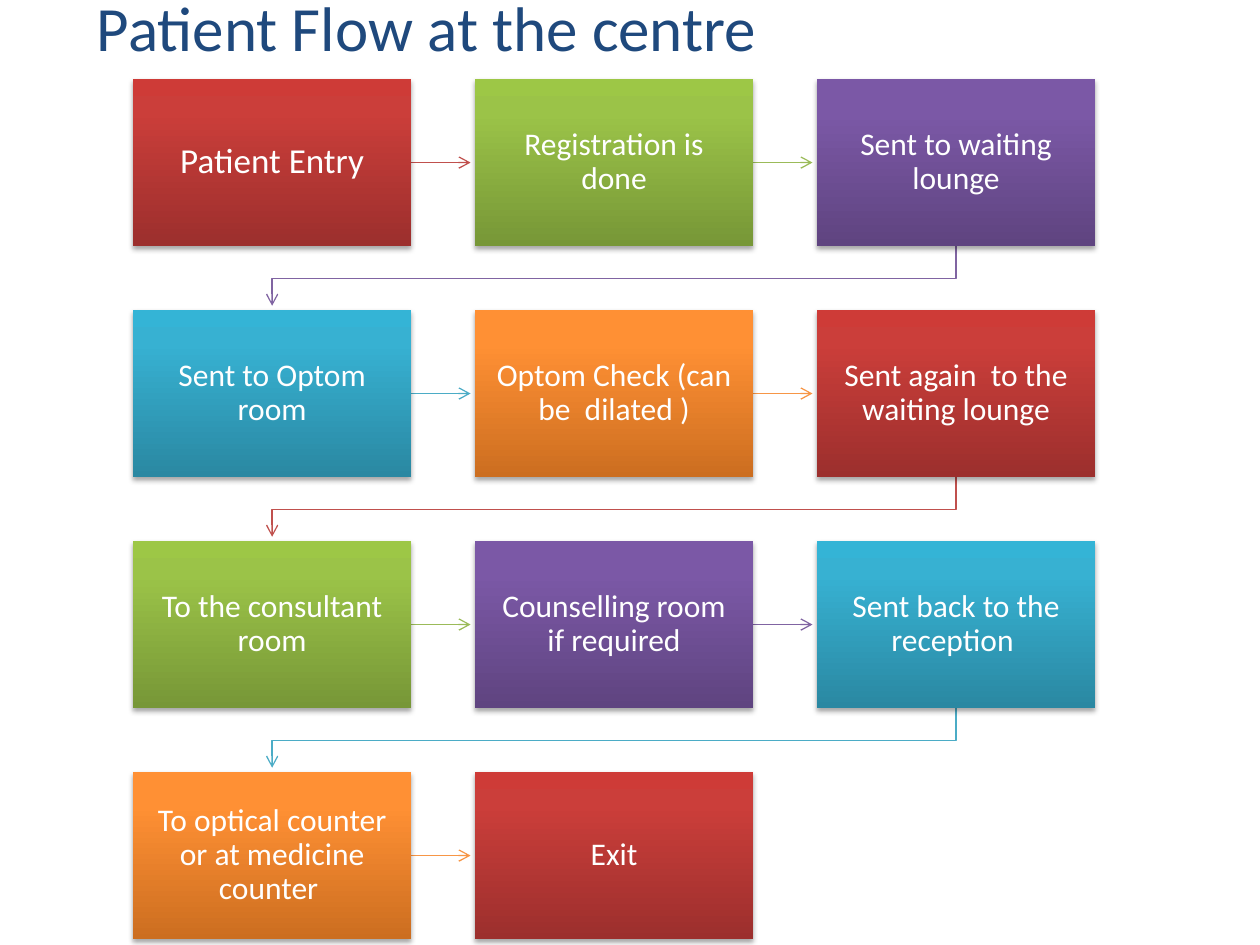
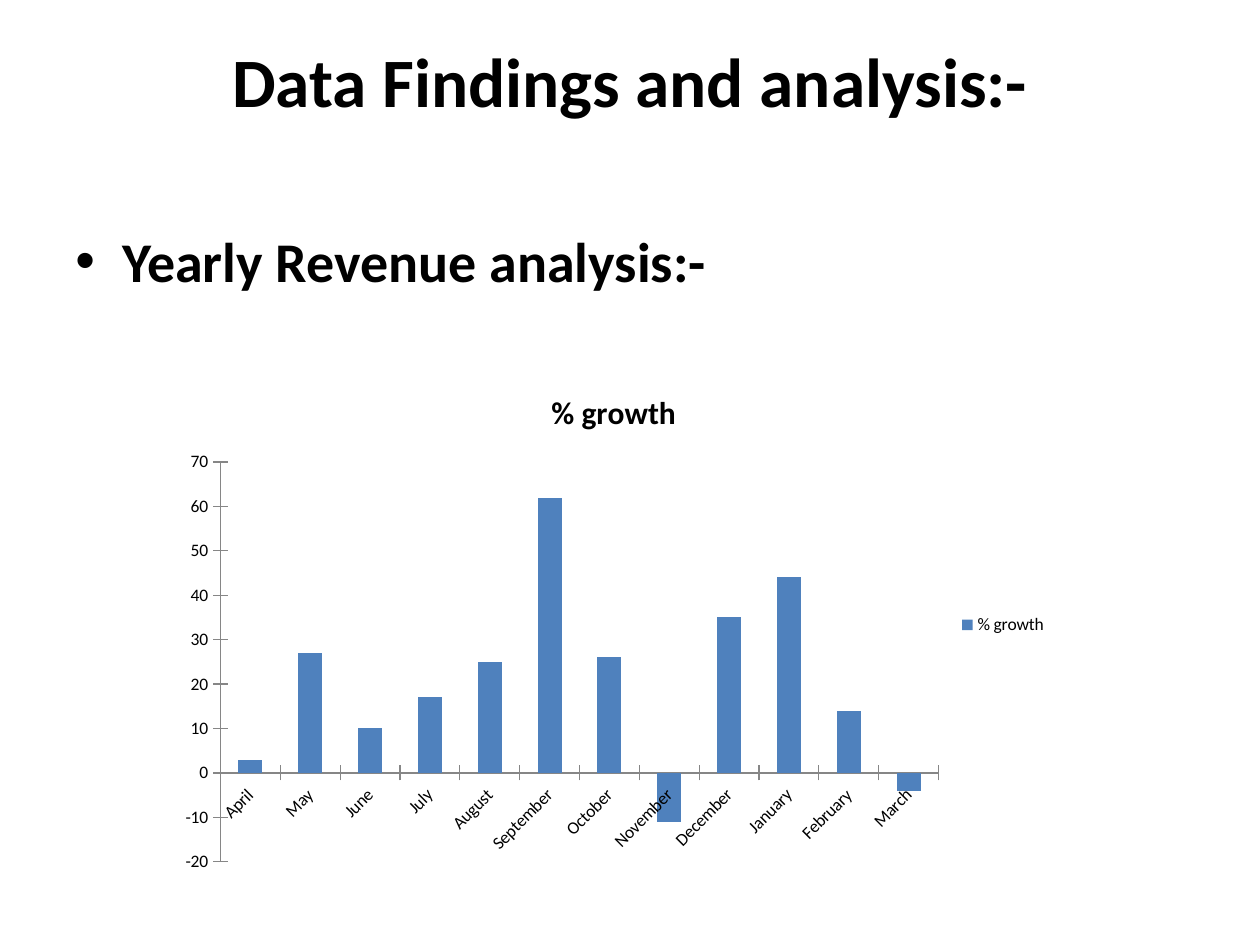
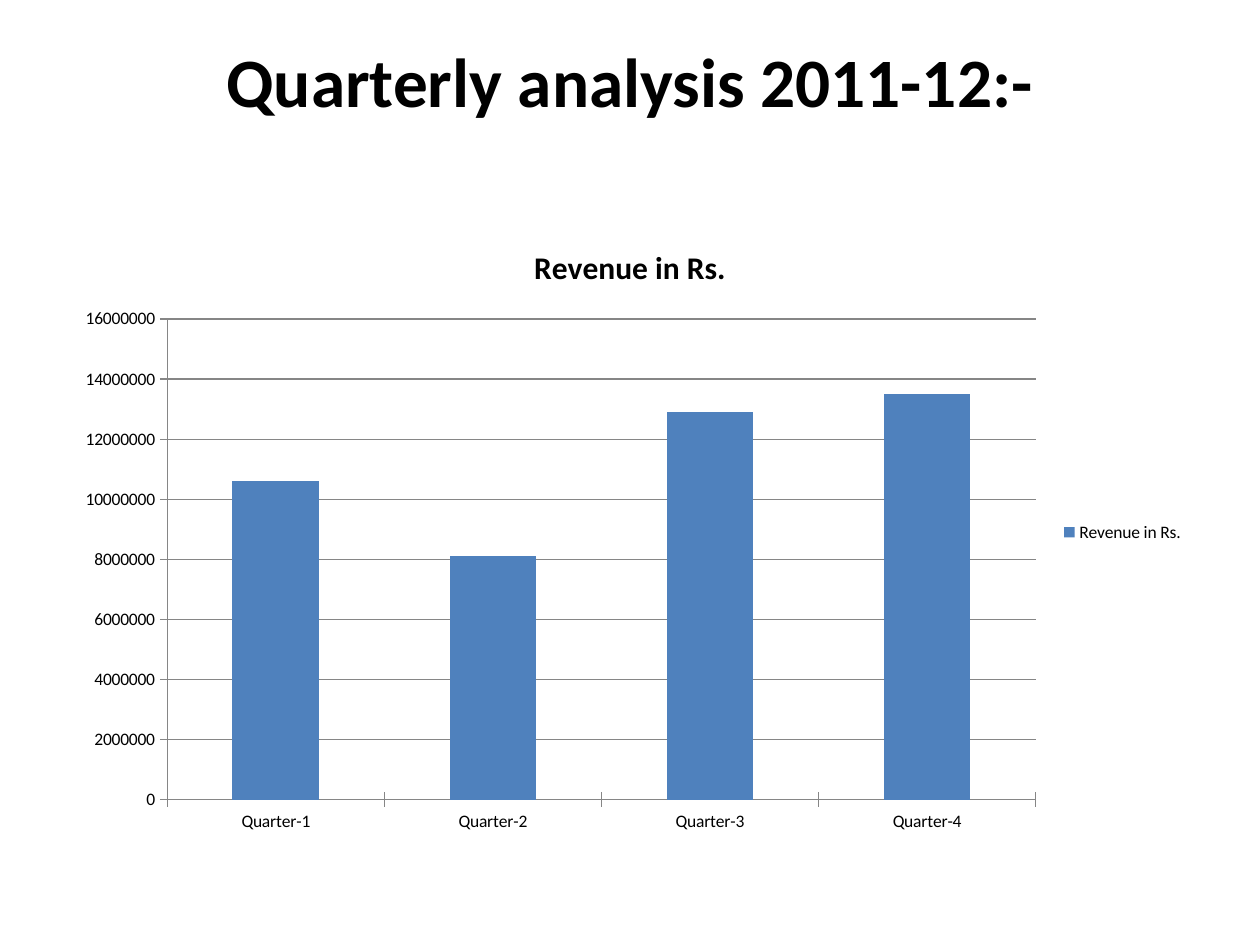
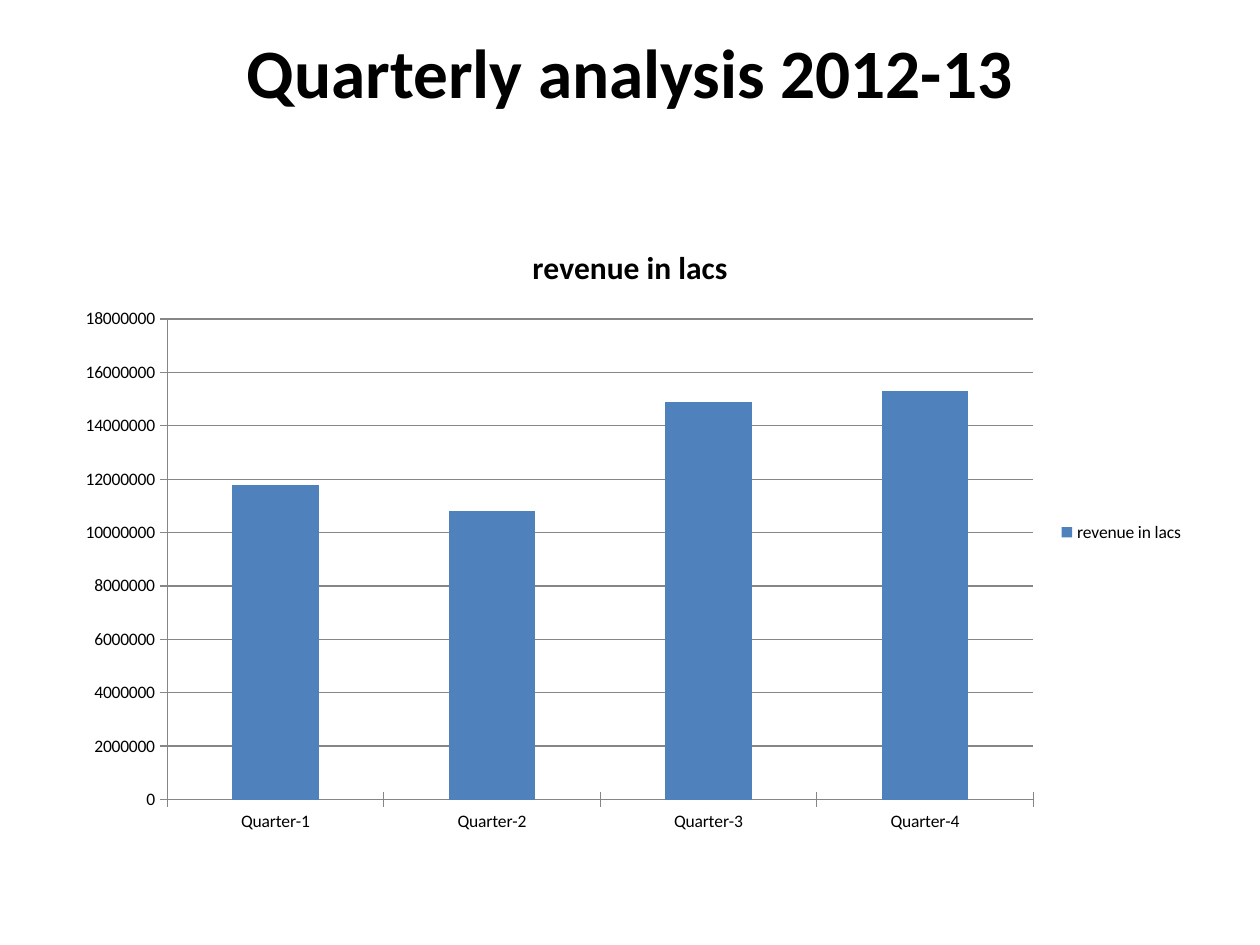
from dataclasses import dataclass

from lxml.etree import SubElement
from pptx import Presentation
from pptx.chart.data import CategoryChartData
from pptx.dml.color import RGBColor
from pptx.enum.chart import XL_CHART_TYPE, XL_LEGEND_POSITION, XL_TICK_MARK
from pptx.enum.shapes import MSO_CONNECTOR, MSO_SHAPE
from pptx.enum.text import MSO_ANCHOR, MSO_AUTO_SIZE, PP_ALIGN
from pptx.oxml.ns import qn
from pptx.util import Pt


@dataclass(frozen=True)
class Accent:
    line: str
    stops: tuple


@dataclass(frozen=True)
class Theme:
    font: str = "Calibri"
    text: str = "000000"
    heading: str = "1F497D"
    box_text: str = "FFFFFF"
    bar: str = "4F81BD"
    axis: str = "868686"
    title_size: float = 39.6
    flow_title_size: float = 36
    bullet_size: float = 32
    chart_title_size: float = 18
    chart_size: float = 10
    box_size: float = 18
    entry_size: float = 20
    line_width: float = 0.75
    accents: tuple = (
        Accent("C0504D", ("9C2F2D", "CB3E3A", "CE3B37")),
        Accent("9BBB59", ("779737", "9BC348", "9DC746")),
        Accent("8064A2", ("5F4480", "7B58A6", "7C57A8")),
        Accent("4BACC6", ("2A88A2", "37B1D2", "34B4D6")),
        Accent("F79646", ("CC6E20", "FF9034", "FF9136")),
    )


FLOW_STEPS = (
    "Patient Entry",
    "Registration is done",
    "Sent to waiting lounge",
    "Sent to Optom room",
    "Optom Check (can be  dilated )",
    "Sent again  to the waiting lounge",
    "To the consultant room",
    "Counselling room if required",
    "Sent back to the reception ",
    "To optical counter or at medicine counter ",
    "Exit",
)
COLUMNS = 3
FLOW_LEFT, FLOW_TOP = 76, 45.2
BOX_WIDTH, BOX_HEIGHT = 159, 95.4
COLUMN_STEP, ROW_STEP = 195.4, 132
ARROW_GAP = 2.5
BEND_DROP = 18.4

MONTHS = ("April", "May", "June", "July", "August", "September",
          "October", "November", "December", "January", "February", "March")
QUARTERS = tuple(f"Quarter-{number}" for number in range(1, 5))
TITLE_BOX = (36, 21.6, 648, 90)
CONTENT_BOX = (36, 126, 648, 356.4)


class Deck:
    def __init__(self, theme):
        self.theme = theme
        self.presentation = Presentation()
        self.presentation.slide_width = Pt(720)
        self.presentation.slide_height = Pt(540)
        self.slide = None

    def add_slide(self):
        layout = self.presentation.slide_layouts.get_by_name("Title Only")
        self.slide = self.presentation.slides.add_slide(layout)

    def style_font(self, font, size, color, bold=False):
        font.name = self.theme.font
        font.size = Pt(size)
        font.bold = bold
        font.color.rgb = RGBColor.from_string(color)

    def add_text(self, frame, text, size, color, bold=False, align=PP_ALIGN.LEFT):
        frame.word_wrap = True
        paragraph = frame.paragraphs[0]
        paragraph.alignment = align
        run = paragraph.add_run()
        run.text = text
        self.style_font(run.font, size, color, bold)
        return paragraph

    def place_title(self, box):
        title = self.slide.shapes.title
        title.left, title.top, title.width, title.height = map(Pt, box)
        title.text_frame.auto_size = MSO_AUTO_SIZE.NONE
        return title.text_frame

    def add_title(self, text, box=TITLE_BOX):
        frame = self.place_title(box)
        frame.vertical_anchor = MSO_ANCHOR.TOP
        frame.margin_top = 0
        self.add_text(frame, text, self.theme.title_size, self.theme.text,
                      bold=True, align=PP_ALIGN.CENTER)

    def add_flow_title(self, text):
        frame = self.place_title((48.2, 2.9, 642.2, 23.8))
        frame.vertical_anchor = MSO_ANCHOR.MIDDLE
        self.add_text(frame, text, self.theme.flow_title_size, self.theme.heading)

    def add_bullet(self, text, box):
        frame = self.slide.shapes.add_textbox(*map(Pt, box)).text_frame
        paragraph = self.add_text(frame, text, self.theme.bullet_size, self.theme.text, bold=True)
        properties = paragraph._p.get_or_add_pPr()
        properties.set("marL", str(Pt(27)))
        properties.set("indent", str(Pt(-27)))
        SubElement(properties, qn("a:buFont"), typeface="Arial")
        SubElement(properties, qn("a:buChar"), char="•")

    def fill_gradient(self, shape, colors):
        shape.fill.gradient()
        shape.fill.gradient_angle = 90
        stops = shape._element.spPr.find(qn("a:gradFill")).find(qn("a:gsLst"))
        for stop in list(stops):
            stops.remove(stop)
        for position, color in zip((0, 80000, 100000), colors):
            stop = SubElement(stops, qn("a:gs"), pos=str(position))
            SubElement(stop, qn("a:srgbClr"), val=color)

    def add_shadow(self, shape):
        shape.shadow.inherit = False
        effects = shape._element.spPr.find(qn("a:effectLst"))
        shadow = SubElement(effects, qn("a:outerShdw"), blurRad=str(Pt(3.1)),
                            dist=str(Pt(1.8)), dir="5400000", rotWithShape="0")
        color = SubElement(shadow, qn("a:srgbClr"), val="000000")
        SubElement(color, qn("a:alpha"), val="35000")

    def add_box(self, text, left, top, accent, size):
        shape = self.slide.shapes.add_shape(
            MSO_SHAPE.RECTANGLE, Pt(left), Pt(top), Pt(BOX_WIDTH), Pt(BOX_HEIGHT))
        self.fill_gradient(shape, accent.stops)
        shape.line.fill.background()
        self.add_shadow(shape)
        frame = shape.text_frame
        frame.vertical_anchor = MSO_ANCHOR.MIDDLE
        inset = Pt(size * 0.56)
        frame.margin_left = frame.margin_right = inset
        frame.margin_top = frame.margin_bottom = inset
        paragraph = self.add_text(frame, text, size, self.theme.box_text, align=PP_ALIGN.CENTER)
        paragraph.line_spacing = 0.9

    def style_arrow(self, arrow, color):
        arrow.line.color.rgb = RGBColor.from_string(color)
        arrow.line.width = Pt(self.theme.line_width)
        SubElement(arrow.line._get_or_add_ln(), qn("a:tailEnd"), type="arrow")

    def add_arrow(self, start, end, color):
        arrow = self.slide.shapes.add_connector(
            MSO_CONNECTOR.STRAIGHT, *map(Pt, start + end))
        self.style_arrow(arrow, color)
        SubElement(arrow._element.spPr, qn("a:effectLst"))

    def add_bent_arrow(self, points, color):
        start, *others = [(Pt(x), Pt(y)) for x, y in points]
        builder = self.slide.shapes.build_freeform(*start)
        builder.add_line_segments(others, close=False)
        arrow = builder.convert_to_shape()
        arrow.fill.background()
        self.style_arrow(arrow, color)
        arrow.shadow.inherit = False

    def add_column_chart(self, name, categories, values, box, gridlines=True, label_turn=None):
        data = CategoryChartData()
        data.categories = categories
        data.add_series(name, values)
        chart = self.slide.shapes.add_chart(
            XL_CHART_TYPE.COLUMN_STACKED, *map(Pt, box), data).chart
        self.style_font(chart.font, self.theme.chart_size, self.theme.text)
        chart.has_title = True
        self.add_text(chart.chart_title.text_frame, name, self.theme.chart_title_size,
                      self.theme.text, bold=True, align=PP_ALIGN.CENTER)
        chart.has_legend = True
        chart.legend.position = XL_LEGEND_POSITION.RIGHT
        chart.legend.include_in_layout = False
        plot = chart.plots[0]
        plot.gap_width = 150
        plot.overlap = 100
        plot.vary_by_categories = False
        series = plot.series[0]
        series.invert_if_negative = False
        series.format.fill.solid()
        series.format.fill.fore_color.rgb = RGBColor.from_string(self.theme.bar)
        chart.value_axis.has_major_gridlines = gridlines
        lines = [chart.category_axis.format.line, chart.value_axis.format.line]
        if gridlines:
            lines.append(chart.value_axis.major_gridlines.format.line)
        for line in lines:
            line.color.rgb = RGBColor.from_string(self.theme.axis)
            line.width = Pt(self.theme.line_width)
        for axis in (chart.category_axis, chart.value_axis):
            axis.major_tick_mark = XL_TICK_MARK.CROSS
            self.style_font(axis.tick_labels.font, self.theme.chart_size, self.theme.text)
        if label_turn is not None:
            body = chart.category_axis._element.find(qn("c:txPr")).find(qn("a:bodyPr"))
            body.set("rot", str(label_turn * 60000))
            body.set("vert", "horz")


def add_patient_flow(deck):
    deck.add_slide()
    deck.add_flow_title("Patient Flow at the centre")
    accents = deck.theme.accents
    for index, step in enumerate(FLOW_STEPS):
        row, column = divmod(index, COLUMNS)
        left = FLOW_LEFT + column * COLUMN_STEP
        top = FLOW_TOP + row * ROW_STEP
        accent = accents[index % len(accents)]
        if index < len(FLOW_STEPS) - 1:
            if column < COLUMNS - 1:
                middle = top + BOX_HEIGHT / 2
                deck.add_arrow((left + BOX_WIDTH, middle),
                               (left + COLUMN_STEP - ARROW_GAP, middle), accent.line)
            else:
                bottom = top + BOX_HEIGHT
                start_x = left + BOX_WIDTH / 2
                end_x = FLOW_LEFT + BOX_WIDTH / 2
                deck.add_bent_arrow(
                    ((start_x, bottom), (start_x, bottom + BEND_DROP),
                     (end_x, bottom + BEND_DROP), (end_x, top + ROW_STEP - ARROW_GAP)),
                    accent.line)
        size = deck.theme.entry_size if index == 0 else deck.theme.box_size
        deck.add_box(step, left, top, accent, size)


def add_yearly_analysis(deck):
    deck.add_slide()
    deck.add_title("Data Findings and analysis:-")
    deck.add_bullet("Yearly Revenue analysis:-", CONTENT_BOX)
    deck.add_column_chart("% growth", MONTHS,
                          (3, 27, 10, 17, 25, 62, 26, -11, 35, 44, 14, -4),
                          (95.8, 210.2, 509.8, 293.8), gridlines=False, label_turn=-45)


def add_quarterly_analysis(deck, title, title_box, name, values):
    deck.add_slide()
    deck.add_title(title, title_box)
    deck.add_column_chart(name, QUARTERS, values, CONTENT_BOX)


def main():
    deck = Deck(Theme())
    add_patient_flow(deck)
    add_yearly_analysis(deck)
    add_quarterly_analysis(deck, "Quarterly analysis 2011-12:-", TITLE_BOX, "Revenue in Rs.",
                           (10600000, 8100000, 12900000, 13500000))
    add_quarterly_analysis(deck, "Quarterly analysis 2012-13", (36, 16.8, 648, 51.8),
                           "revenue in lacs", (11800000, 10800000, 14900000, 15300000))
    deck.presentation.save("out.pptx")


if __name__ == "__main__":
    main()
